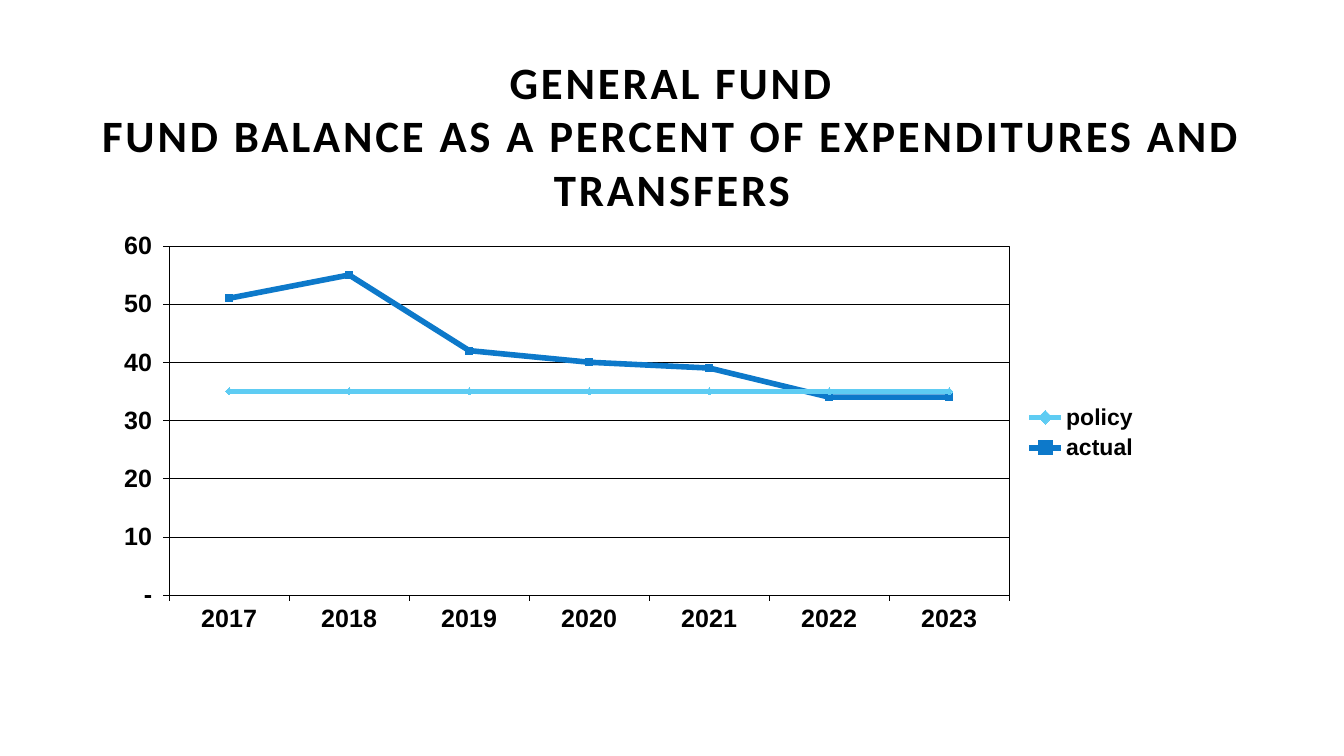
from lxml import etree
from pptx import Presentation
from pptx.chart.data import CategoryChartData
from pptx.dml.color import RGBColor
from pptx.enum.chart import XL_CHART_TYPE, XL_LEGEND_POSITION, XL_MARKER_STYLE, XL_TICK_MARK
from pptx.enum.text import MSO_ANCHOR, PP_ALIGN
from pptx.oxml import parse_xml
from pptx.util import Pt

LINE_STACKED = XL_CHART_TYPE.LINE_MARKERS_STACKED
LEGEND_RIGHT = XL_LEGEND_POSITION.RIGHT
SQUARE, DIAMOND = XL_MARKER_STYLE.SQUARE, XL_MARKER_STYLE.DIAMOND
TICK_OUT, TICK_NONE = XL_TICK_MARK.OUTSIDE, XL_TICK_MARK.NONE
MIDDLE, CENTER = MSO_ANCHOR.MIDDLE, PP_ALIGN.CENTER
CHART_NS = "http://schemas.openxmlformats.org/drawingml/2006/chart"
DRAWING_NS = "http://schemas.openxmlformats.org/drawingml/2006/main"

TITLE_LINES = [
    "GENERAL FUND",
    "FUND BALANCE AS A PERCENT OF EXPENDITURES AND TRANSFERS",
]
YEARS = ["2017", "2018", "2019", "2020", "2021", "2022", "2023"]
SERIES = [
    ("actual", [51, 55, 42, 40, 39, 34, 34], "0D79CA", SQUARE),
    ("policy", [-16, -20, -7, -5, -4, 1, 1], "5ECCF3", DIAMOND),
]
NUMBER_FORMAT = r'_(* #,##0_);_(* \(#,##0\);_(* "-"_);_(@_)'

THEME = {
    "ink": "000000",
    "title_font": "Calibri",
    "title_size": 32,
    "chart_font": "Arial",
    "axis_size": 17.9,
    "legend_size": 16.4,
    "hairline": 0.25,
    "series_line": 4,
    "marker": 5,
}
SLIDE_SIZE = (960, 540)
TITLE_BOX = (18, 44.6, 924, 103.7)
CHART_BOX = (54.7, 149, 869.8, 333.4)
PLOT_AREA = (0.076, 0.08, 0.69, 0.748)
LEGEND_AREA = (0.775, 0.41, 0.1, 0.14)


def color(value):
    return RGBColor.from_string(value)


def style_font(font, name, size):
    font.name, font.size, font.bold = name, Pt(size), True
    font.color.rgb = color(THEME["ink"])


def add_text(slide, lines, box, font, size, align, anchor, spacing):
    frame = slide.shapes.add_textbox(*map(Pt, box)).text_frame
    frame.word_wrap = True
    frame.vertical_anchor = anchor
    paragraph = frame.paragraphs[0]
    paragraph.alignment = align
    for index, line in enumerate(lines):
        if index:
            paragraph.add_line_break()
        run = paragraph.add_run()
        run.text = line
        style_font(run.font, font, size)
        run.font._element.set("spc", str(spacing * 100))


def set_layout(element, position, area, inner=False):
    for old in element.findall(f"{{{CHART_NS}}}layout"):
        element.remove(old)
    layout = parse_xml(f'<c:layout xmlns:c="{CHART_NS}"><c:manualLayout/></c:layout>')
    settings = [("layoutTarget", "inner")] if inner else []
    settings += [("xMode", "edge"), ("yMode", "edge"), *zip("xywh", area)]
    for tag, value in settings:
        etree.SubElement(layout[0], f"{{{CHART_NS}}}{tag}").set("val", str(value))
    element.insert(position, layout)


def style_line(line, line_color, width):
    line.color.rgb = color(line_color)
    line.width = Pt(width)


def style_axis(axis):
    axis.major_tick_mark, axis.minor_tick_mark = TICK_OUT, TICK_NONE
    style_line(axis.format.line, THEME["ink"], THEME["hairline"])
    style_font(axis.tick_labels.font, THEME["chart_font"], THEME["axis_size"])


def add_balance_chart(slide):
    data = CategoryChartData(number_format=NUMBER_FORMAT)
    data.categories = YEARS
    for name, values, _, _ in SERIES:
        data.add_series(name, values)
    chart = slide.shapes.add_chart(LINE_STACKED, *map(Pt, CHART_BOX), data).chart
    chart.has_title = False
    style_font(chart.font, THEME["chart_font"], THEME["axis_size"])
    chart.plots[0].vary_by_categories = False

    for series, (_, _, series_color, marker_style) in zip(chart.plots[0].series, SERIES):
        series.smooth = False
        style_line(series.format.line, series_color, THEME["series_line"])
        marker = series.marker
        marker.style, marker.size = marker_style, THEME["marker"]
        marker.format.fill.solid()
        marker.format.fill.fore_color.rgb = color(series_color)
        style_line(marker.format.line, series_color, THEME["hairline"])

    values_axis = chart.value_axis
    for axis in (chart.category_axis, values_axis):
        style_axis(axis)
    values_axis.minimum_scale, values_axis.maximum_scale = 0, 60
    values_axis.major_unit = 10
    values_axis.has_major_gridlines = True
    style_line(values_axis.major_gridlines.format.line, THEME["ink"], THEME["hairline"])
    values_axis.tick_labels.number_format = NUMBER_FORMAT
    values_axis.tick_labels.number_format_is_linked = False

    chart.has_legend = True
    legend = chart.legend
    legend.position, legend.include_in_layout = LEGEND_RIGHT, False
    style_font(legend.font, THEME["chart_font"], THEME["legend_size"])
    set_layout(legend._element, 1, LEGEND_AREA)

    plot_area = chart._chartSpace.chart.plotArea
    set_layout(plot_area, 0, PLOT_AREA, inner=True)
    plot_area.append(parse_xml(
        f'<c:spPr xmlns:c="{CHART_NS}" xmlns:a="{DRAWING_NS}"><a:noFill/>'
        f'<a:ln w="{Pt(THEME["hairline"])}"><a:solidFill>'
        f'<a:srgbClr val="{THEME["ink"]}"/></a:solidFill></a:ln></c:spPr>'
    ))


def main():
    presentation = Presentation()
    presentation.slide_width, presentation.slide_height = map(Pt, SLIDE_SIZE)
    slide = presentation.slides.add_slide(presentation.slide_layouts[6])
    add_text(slide, TITLE_LINES, TITLE_BOX, font=THEME["title_font"],
             size=THEME["title_size"], align=CENTER, anchor=MIDDLE, spacing=2)
    add_balance_chart(slide)
    presentation.save("out.pptx")


if __name__ == "__main__":
    main()
